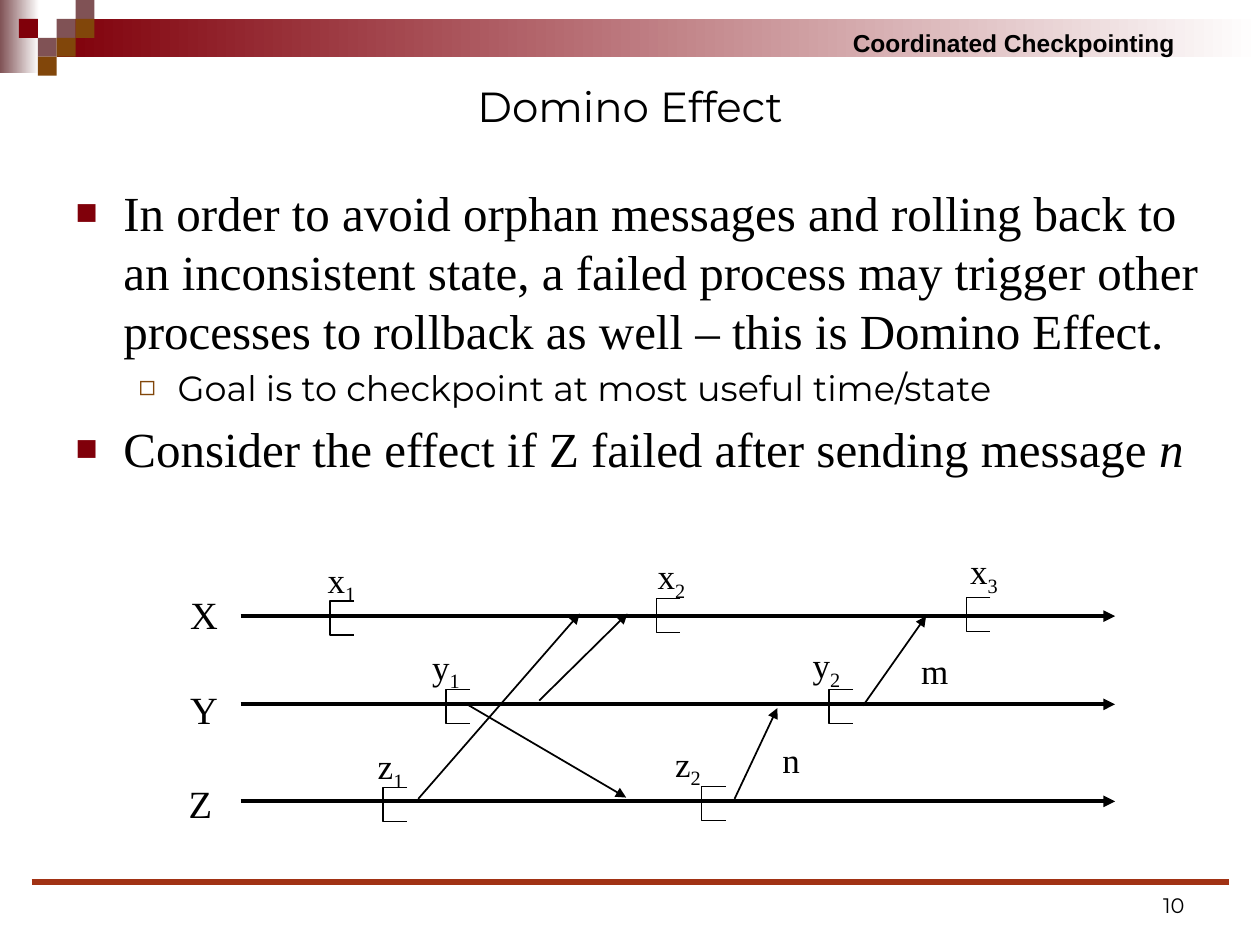
from lxml import etree
from pptx import Presentation
from pptx import util as u
from pptx.dml.color import RGBColor
from pptx.enum import shapes, text
from pptx.oxml.ns import qn

BLACK = RGBColor(0, 0, 0)
WHITE = RGBColor(0xFF, 0xFF, 0xFF)
RED = RGBColor(0x80, 0x00, 0x0A)
MAUVE = RGBColor(0x80, 0x52, 0x55)
BROWN = RGBColor(0x81, 0x46, 0x0A)
RUST = RGBColor(0xA1, 0x32, 0x14)
SANS, SERIF, HEAD = "Montserrat", "Times New Roman", "Arial"

# Content
HEADER, TITLE, PAGE = "Coordinated Checkpointing", "Domino Effect", "10"
# level, space before, runs of (text, italic)
BODY = [
    (0, 0, [("In order to avoid orphan messages and rolling back to an inconsistent "
             "state, a failed process may trigger other processes to rollback as well "
             "– this is Domino Effect.", False)]),
    (1, 4, [("Goal is to checkpoint at most useful time/state", False)]),
    (0, 5.6, [("Consider the effect if Z failed after sending message ", False),
              ("n", True)]),
]
# margin, indent, bullet, bullet colour, bullet size %, text size, font
LEVELS = [(0.38, -0.38, "■", RED, 75, 28, SERIF),
          (0.81, -0.31, "◻", BROWN, 80, 20, SANS)]
# process: (timeline y, name centre, checkpoints as (bracket x, y, label centre x, y))
PROCESSES = {
    "X": (4.89, (1.62, 4.87), [(2.62, 4.77, 2.71, 4.62), (5.21, 4.75, 5.33, 4.59),
                               (7.67, 4.74, 7.81, 4.55)]),
    "Y": (5.59, (1.62, 5.63), [(3.54, 5.47, 3.54, 5.31), (6.58, 5.47, 6.56, 5.3)]),
    "Z": (6.36, (1.59, 6.37), [(3.04, 6.25, 3.1, 6.1), (5.57, 6.24, 5.46, 6.08)]),
}
MESSAGES = [(6.85, 5.6, 7.35, 4.89), (5.83, 6.34, 6.17, 5.62), (3.32, 6.34, 4.6, 4.87),
            (4.28, 5.56, 4.98, 4.87), (3.69, 5.58, 4.97, 6.33)]
MESSAGE_NAMES = [("n", 6.28, 6.03), ("m", 7.42, 5.32)]
TIME_START, TIME_END = 1.91, 8.85
BRACKET_W, BRACKET_H = 0.19, 0.27
# corner mosaic: (column, row, colour) on a grid of square tiles
TILE = 0.15
TILES = [(3, 1, MAUVE), (4, 0, MAUVE), (4, 1, BROWN), (2, 2, MAUVE),
         (1, 1, RED), (3, 2, BROWN), (2, 3, BROWN)]

prs = Presentation()
prs.slide_width, prs.slide_height = u.Inches(10), u.Inches(7.5)
s = prs.slides.add_slide(prs.slide_layouts[1])


def place(sp, x, y, w, h):
    sp.left, sp.top, sp.width, sp.height = (u.Inches(v) for v in (x, y, w, h))


def add_run(p, words, size, font, bold=False, italic=False):
    r = p.add_run()
    r.text = words
    f = r.font
    f.size, f.name, f.bold, f.italic = u.Pt(size), font, bold, italic
    f.color.rgb = BLACK
    return r


def rect(x, y, w, h, color, fade=False):
    sp = s.shapes.add_shape(shapes.MSO_SHAPE.RECTANGLE, *map(u.Inches, (x, y, w, h)))
    sp.shadow.inherit = False
    sp.line.fill.background()
    if fade:
        sp.fill.gradient()
        sp.fill.gradient_angle = 0
        for stop, c, pos in zip(sp.fill.gradient_stops, (color, WHITE), (0, 1)):
            stop.color.rgb, stop.position = c, pos
    else:
        sp.fill.solid()
        sp.fill.fore_color.rgb = color


def line(x1, y1, x2, y2, width, color=BLACK, arrow=True):
    c = s.shapes.add_connector(shapes.MSO_CONNECTOR.STRAIGHT,
                               *map(u.Inches, (x1, y1, x2, y2)))
    c.line.color.rgb, c.line.width = color, u.Pt(width)
    if arrow:
        ln = c._element.spPr.find(qn("a:ln"))
        etree.SubElement(ln, qn("a:tailEnd"), type="triangle")
    etree.SubElement(c._element.spPr, qn("a:effectLst"))


def textbox(x, y, w, h, align, anchor, margins=True):
    tf = s.shapes.add_textbox(*map(u.Inches, (x, y, w, h))).text_frame
    tf.word_wrap, tf.vertical_anchor = True, anchor
    if not margins:
        tf.margin_left = tf.margin_right = tf.margin_top = tf.margin_bottom = 0
    p = tf.paragraphs[0]
    p.alignment = align
    return p


def label(words, cx, cy, size=20, sub=""):
    w, h = 0.5, 0.26
    p = textbox(cx - w / 2, cy - h / 2, w, h, text.PP_ALIGN.CENTER,
                text.MSO_ANCHOR.MIDDLE, margins=False)
    add_run(p, words, size, SERIF)
    if sub:
        r = add_run(p, sub, size, SERIF)
        r.font._element.set("baseline", "-25000")


def bracket(x, y):
    right, bottom = x + BRACKET_W, y + BRACKET_H
    fb = s.shapes.build_freeform(u.Inches(right), u.Inches(y))
    fb.add_line_segments([(u.Inches(a), u.Inches(b)) for a, b in
                          ((x, y), (x, bottom), (right, bottom))], close=False)
    sp = fb.convert_to_shape()
    sp.shadow.inherit = False
    sp.fill.background()
    sp.line.color.rgb, sp.line.width = BLACK, u.Pt(0.75)


def bullet(p, level):
    margin, indent, char, color, pct, _, _ = LEVELS[level]
    pPr = p._p.get_or_add_pPr()
    pPr.set("marL", str(u.Inches(margin)))
    pPr.set("indent", str(u.Inches(indent)))
    clr = etree.SubElement(pPr, qn("a:buClr"))
    etree.SubElement(clr, qn("a:srgbClr"), val=str(color))
    etree.SubElement(pPr, qn("a:buSzPct"), val=str(pct * 1000))
    etree.SubElement(pPr, qn("a:buChar"), char=char)


# Header band, mosaic and footer rule
rect(0, 0, 0.31, 0.58, MAUVE, fade=True)
rect(3 * TILE, TILE, 10 - 3 * TILE, 2 * TILE, RED, fade=True)
for col, row, color in TILES:
    rect(col * TILE, row * TILE, TILE, TILE, color)
line(0.25, 7, 9.75, 7, 3, RUST, arrow=False)
p = textbox(6.67, 0.17, 2.83, 0.33, text.PP_ALIGN.LEFT, text.MSO_ANCHOR.TOP)
add_run(p, HEADER, 14, HEAD, bold=True)

# Title
title = s.shapes.title
place(title, 0.5, 0.5, 9, 0.67)
tf = title.text_frame
tf.auto_size, tf.vertical_anchor = text.MSO_AUTO_SIZE.NONE, text.MSO_ANCHOR.MIDDLE
tf.paragraphs[0].alignment = text.PP_ALIGN.CENTER
add_run(tf.paragraphs[0], TITLE, 24, SANS)

# Bulleted body
body = s.placeholders[1]
place(body, 0.5, 1.4, 9.17, 5.01)
tf = body.text_frame
tf.auto_size = text.MSO_AUTO_SIZE.NONE
for i, (level, before, runs) in enumerate(BODY):
    p = tf.add_paragraph() if i else tf.paragraphs[0]
    p.level, p.space_before = level, u.Pt(before)
    bullet(p, level)
    for words, italic in runs:
        add_run(p, words, *LEVELS[level][5:], italic=italic)

# Page number
p = textbox(7.17, 6.83, 2.33, 0.5, text.PP_ALIGN.RIGHT, text.MSO_ANCHOR.BOTTOM)
add_run(p, PAGE, 12, SANS)

# Process timelines with numbered checkpoints
for name, (y, centre, checkpoints) in PROCESSES.items():
    line(TIME_START, y, TIME_END, y, 2.25)
    label(name, *centre, size=22)
    for n, (bx, by, cx, cy) in enumerate(checkpoints, 1):
        bracket(bx, by)
        label(name.lower(), cx, cy, sub=str(n))

# Messages between processes
for ends in MESSAGES:
    line(*ends, 1)
for name, cx, cy in MESSAGE_NAMES:
    label(name, cx, cy)

prs.save("out.pptx")
